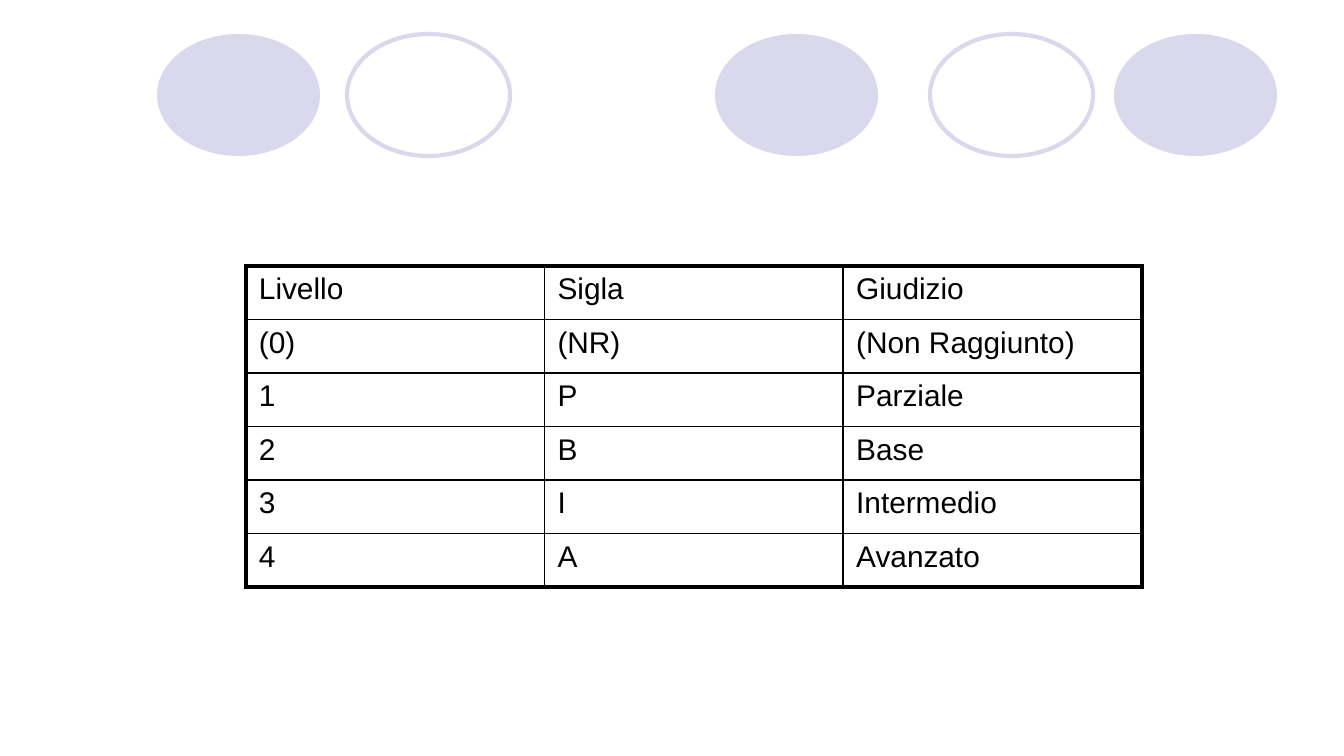
from lxml.etree import SubElement
from pptx import Presentation
from pptx.dml.color import RGBColor
from pptx.enum.shapes import MSO_SHAPE
from pptx.oxml.ns import qn
from pptx.util import Emu, Pt

SLIDE_W, SLIDE_H = 1344, 756
LILAC, BLACK = "D9D8EC", "000000"
OVAL_TOP, OVAL_W, OVAL_H = 34, 163, 122
OVALS = [(715, True), (1114, True), (157, True), (930, False), (347, False)]
TABLE_LEFT, TABLE_TOP, TABLE_W, TABLE_H = 246, 266, 896, 321
THICK, THIN = 2.25, 1
LEVELS = [
    ("Livello", "Sigla", "Giudizio"),
    ("(0)", "(NR)", "(Non Raggiunto)"),
    ("1", "P", "Parziale"),
    ("2", "B", "Base"),
    ("3", "I", "Intermedio"),
    ("4", "A", "Avanzato"),
]
FONT = {"name": "Arial", "size": Pt(16), "bold": False}
MARGINS = {"margin_left": 13, "margin_top": 7, "margin_right": 13, "margin_bottom": 7}


def px(n):
    return Emu(round(n * 9144000 / SLIDE_W))


def rgb(color):
    return RGBColor.from_string(color)


def set_attrs(obj, values):
    for name, value in values.items():
        setattr(obj, name, value)


def add_oval(s, left, filled):
    sp = s.shapes.add_shape(
        MSO_SHAPE.OVAL, px(left), px(OVAL_TOP), px(OVAL_W), px(OVAL_H)
    )
    sp.shadow.inherit = False
    if filled:
        sp.fill.solid()
        sp.fill.fore_color.rgb = rgb(LILAC)
        sp.line.fill.background()
    else:
        sp.fill.background()
        sp.line.color.rgb = rgb(LILAC)
        sp.line.width = Pt(THICK)


def set_borders(cell, outer_sides):
    tcPr = cell._tc.get_or_add_tcPr()
    for i, (side, outer) in enumerate(outer_sides.items()):
        ln = tcPr.makeelement(qn(f"a:{side}"), {"w": str(Pt(THICK if outer else THIN))})
        fill = SubElement(ln, qn("a:solidFill"))
        SubElement(fill, qn("a:srgbClr"), val=BLACK)
        tcPr.insert(i, ln)


def fill_cell(cell, text):
    cell.fill.background()
    set_attrs(cell, {name: px(n) for name, n in MARGINS.items()})
    r = cell.text_frame.paragraphs[0].add_run()
    r.text = text
    set_attrs(r.font, FONT)
    r.font.color.rgb = rgb(BLACK)


def add_level_table(s):
    rows, cols = len(LEVELS), len(LEVELS[0])
    table = s.shapes.add_table(
        rows, cols, px(TABLE_LEFT), px(TABLE_TOP), px(TABLE_W), px(TABLE_H)
    ).table
    set_attrs(table, {"first_row": False, "horz_banding": False})
    for i, level in enumerate(LEVELS):
        for j, text in enumerate(level):
            cell = table.cell(i, j)
            fill_cell(cell, text)
            set_borders(cell, {
                "lnL": j == 0,
                "lnR": j == cols - 1,
                "lnT": i == 0,
                "lnB": i == rows - 1,
            })


def main():
    prs = Presentation()
    set_attrs(prs, {"slide_width": px(SLIDE_W), "slide_height": px(SLIDE_H)})
    s = prs.slides.add_slide(prs.slide_layouts[6])
    for left, filled in OVALS:
        add_oval(s, left, filled)
    add_level_table(s)
    prs.save("out.pptx")


if __name__ == "__main__":
    main()
